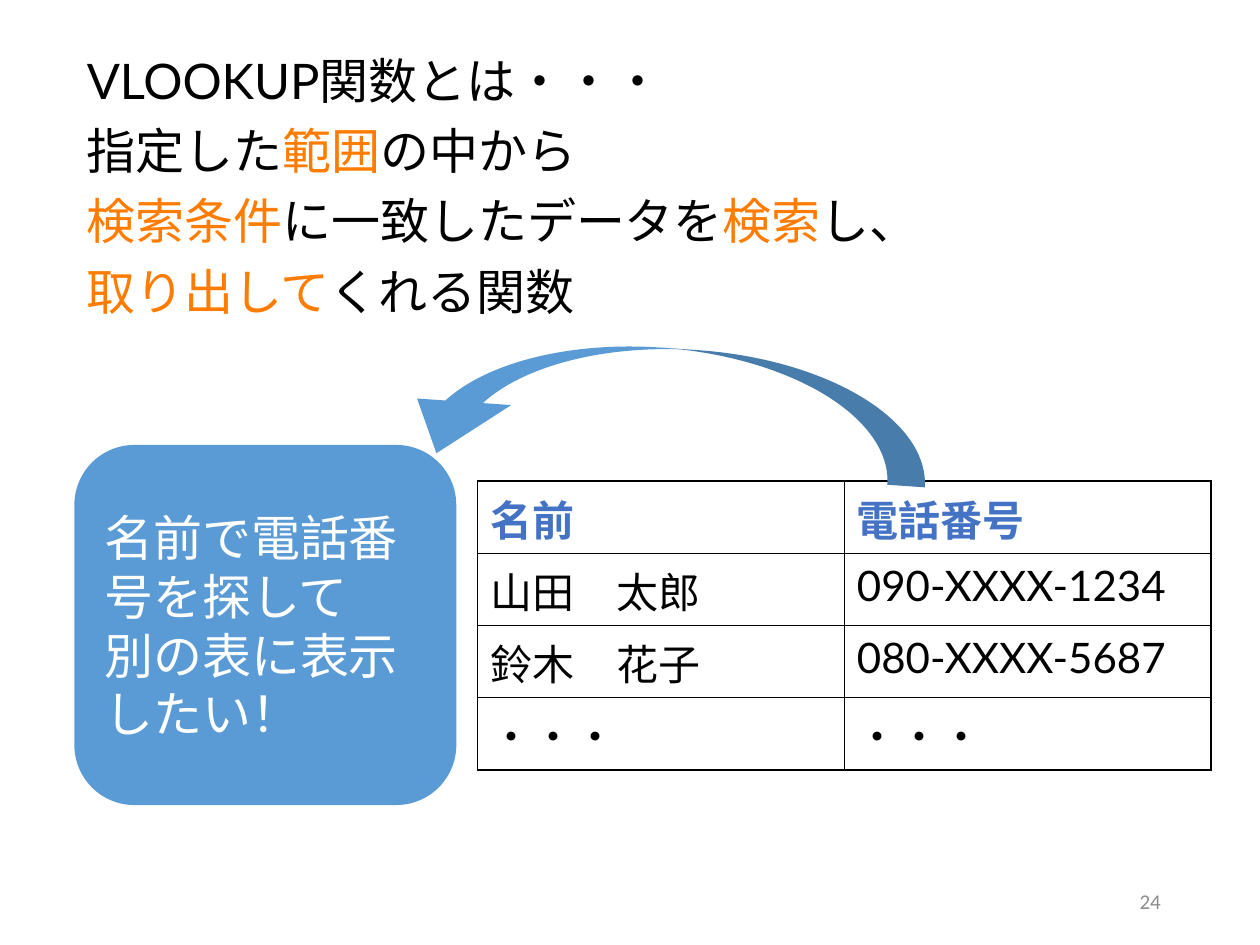
from lxml import etree
from pptx import Presentation
from pptx.dml.color import RGBColor
from pptx.enum.shapes import MSO_SHAPE as SHAPE
from pptx.enum.text import MSO_ANCHOR as ANCHOR, PP_ALIGN as ALIGN
from pptx.oxml.ns import qn
from pptx.util import Cm, Pt

COLORS = {
    "text": "000000",
    "accent": "FF7C00",
    "header": "4472C4",
    "shape": "5B9BD5",
    "white": "FFFFFF",
    "number": "8C8C8C",
}
FONT = "Lato"

DEFINITION = [
    [("VLOOKUP関数とは・・・", "text")],
    [("指定した", "text"), ("範囲", "accent"), ("の中から", "text")],
    [("検索条件", "accent"), ("に一致したデータを", "text"),
     ("検索", "accent"), ("し、", "text")],
    [("取り出して", "accent"), ("くれる関数", "text")],
]
PHONE_BOOK = [
    ("名前", "電話番号"),
    ("山田　太郎", "090-XXXX-1234"),
    ("鈴木　花子", "080-XXXX-5687"),
    ("・・・", "・・・"),
]


def rgb(name):
    return RGBColor.from_string(COLORS[name])


def style_run(r, size, color, font=FONT, bold=False):
    r.font.size = Pt(size)
    r.font.name = font
    r.font.bold = bold
    r.font.color.rgb = rgb(color)


def add_text_box(slide, box, lines, size, font=FONT):
    tf = slide.shapes.add_textbox(*map(Cm, box)).text_frame
    tf.word_wrap = True
    for i, line in enumerate(lines):
        p = tf.paragraphs[0] if i == 0 else tf.add_paragraph()
        for text, color in line:
            r = p.add_run()
            r.text = text
            style_run(r, size, color, font)
    return tf


def add_filled_shape(slide, kind, box):
    sp = slide.shapes.add_shape(kind, *map(Cm, box))
    sp.shadow.inherit = False
    sp.fill.solid()
    sp.fill.fore_color.rgb = rgb("shape")
    sp.line.fill.background()
    return sp


def set_borders(cell, color):
    tc_pr = cell._tc.get_or_add_tcPr()
    for i, side in enumerate(("lnL", "lnR", "lnT", "lnB")):
        ln = etree.Element(qn(f"a:{side}"), w=str(Pt(1)))
        fill = etree.SubElement(ln, qn("a:solidFill"))
        etree.SubElement(fill, qn("a:srgbClr"), val=COLORS[color])
        tc_pr.insert(i, ln)


def add_phone_table(slide, box, rows):
    frame = slide.shapes.add_table(len(rows), len(rows[0]), *map(Cm, box))
    for i, row in enumerate(rows):
        for j, text in enumerate(row):
            cell = frame.table.cell(i, j)
            cell.fill.background()
            set_borders(cell, "text")
            cell.text_frame.text = text
            style_run(cell.text_frame.paragraphs[0].runs[0], 24,
                      "text" if i else "header", bold=i == 0)


def add_callout(slide, box, text):
    sp = add_filled_shape(slide, SHAPE.ROUNDED_RECTANGLE, box)
    tf = sp.text_frame
    tf.text = text
    tf.word_wrap = True
    tf.vertical_anchor = ANCHOR.MIDDLE
    for p in tf.paragraphs:
        p.alignment = ALIGN.LEFT
        style_run(p.runs[0], 28, "white")


def add_curved_arrow(slide, box, rotation, adjustments):
    sp = add_filled_shape(slide, SHAPE.CURVED_UP_ARROW, box)
    sp.rotation = rotation
    for i, value in enumerate(adjustments):
        sp.adjustments[i] = value


def main():
    prs = Presentation()
    prs.slide_width, prs.slide_height = Cm(25.4), Cm(19.05)
    slide = prs.slides.add_slide(prs.slide_layouts[6])

    tf = add_text_box(slide, (17.93, 17.65, 5.72, 1.02),
                      [[("24", "number")]], 12, "Calibri")
    tf.vertical_anchor = ANCHOR.MIDDLE
    tf.paragraphs[0].alignment = ALIGN.RIGHT

    tf = add_text_box(slide, (1.5, 1.02, 23.72, 6.32), DEFINITION, 28)
    for p in tf.paragraphs:
        p.line_spacing = 0.9
        p.space_before = Pt(10)

    add_phone_table(slide, (9.63, 9.7, 14.78, 5.82), PHONE_BOOK)
    add_callout(slide, (1.5, 8.97, 7.7, 7.26),
                "名前で電話番号を探して\n別の表に表示したい！")
    add_curved_arrow(slide, (7.92, 7.01, 10.82, 2.44), 184,
                     (0.31, 0.78, 0.44))
    prs.save("out.pptx")


if __name__ == "__main__":
    main()
